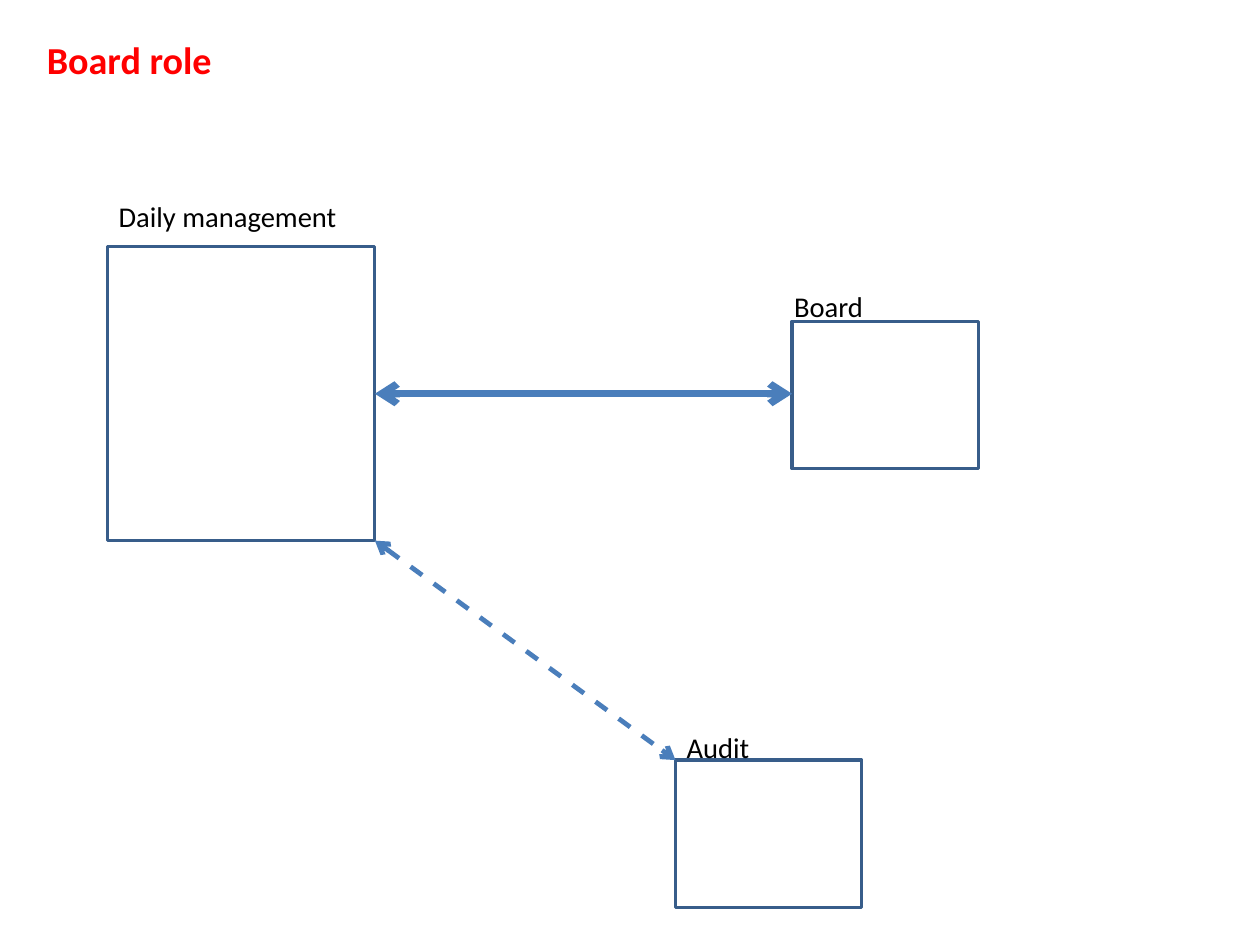
from lxml import etree
from pptx import Presentation
from pptx.dml.color import RGBColor
from pptx.enum.shapes import MSO_CONNECTOR, MSO_SHAPE
from pptx.enum.text import MSO_ANCHOR, MSO_AUTO_SIZE, PP_ALIGN
from pptx.oxml.ns import qn
from pptx.util import Inches, Pt

RECTANGLE = MSO_SHAPE.RECTANGLE
STRAIGHT = MSO_CONNECTOR.STRAIGHT
TOP = MSO_ANCHOR.TOP
LEFT = PP_ALIGN.LEFT
NO_AUTOFIT = MSO_AUTO_SIZE.NONE

RED = RGBColor(0xFF, 0x00, 0x00)
BLACK = RGBColor(0x00, 0x00, 0x00)
WHITE = RGBColor(0xFF, 0xFF, 0xFF)
BOX_BLUE = RGBColor(0x38, 0x5D, 0x8A)
ARROW_BLUE = RGBColor(0x4A, 0x7E, 0xBB)

# Content: left, top, width, height in inches
TITLE = ("Board role", (0.31, 0.27, 10.55, 2.63))
MANAGEMENT = (0.94, 2.16, 2.34, 2.57)
BOARD = (6.93, 2.81, 1.63, 1.29)
AUDIT = (5.91, 6.65, 1.63, 1.29)
LABELS = [
    ("Daily management", (0.94, 1.69, 3.23, 0.4)),
    ("Board", (6.85, 2.48, 2.36, 0.4)),
    ("Audit", (5.91, 6.34, 1.97, 0.4)),
]
TITLE_FONT = {"name": "Calibri", "size": Pt(24), "bold": True}
LABEL_FONT = {"name": "Calibri", "size": Pt(18), "bold": False}

# The page is 28 by 21 centimetres
CM_PER_INCH = 2.54
PAGE_WIDTH = Inches(28 / CM_PER_INCH)
PAGE_HEIGHT = Inches(21 / CM_PER_INCH)


def inches(values):
    return [Inches(value) for value in values]


def write(shape, text, font, color):
    frame = shape.text_frame
    frame.word_wrap = True
    frame.auto_size = NO_AUTOFIT
    frame.vertical_anchor = TOP
    para = frame.paragraphs[0]
    para.alignment = LEFT
    span = para.add_run()
    span.text = text
    for name, value in font.items():
        setattr(span.font, name, value)
    span.font.color.rgb = color


def add_arrow(page, start, end, width, dashed=False):
    arrow = page.shapes.add_connector(STRAIGHT, *inches(start + end))
    arrow.line.color.rgb = ARROW_BLUE
    arrow.line.width = Pt(width)
    outline = arrow.line._get_or_add_ln()
    # Dashes and gaps of three line widths
    if dashed:
        pattern = etree.SubElement(outline, qn("a:custDash"))
        etree.SubElement(pattern, qn("a:ds"), d="300000", sp="300000")
    # Arrowheads at both ends, no shadow
    for tag in ("a:headEnd", "a:tailEnd"):
        etree.SubElement(outline, qn(tag), type="arrow")
    etree.SubElement(arrow._element.spPr, qn("a:effectLst"))


def main():
    deck = Presentation()
    deck.slide_width = PAGE_WIDTH
    deck.slide_height = PAGE_HEIGHT
    page = deck.slides.add_slide(deck.slide_layouts[5])

    # Title
    text, area = TITLE
    title = page.shapes.title
    title.left, title.top, title.width, title.height = inches(area)
    write(title, text, TITLE_FONT, RED)

    # Boxes
    for area in (MANAGEMENT, BOARD, AUDIT):
        box = page.shapes.add_shape(RECTANGLE, *inches(area))
        box.shadow.inherit = False
        box.fill.solid()
        box.fill.fore_color.rgb = WHITE
        box.line.color.rgb = BOX_BLUE
        box.line.width = Pt(2)

    # Labels
    for text, area in LABELS:
        label = page.shapes.add_textbox(*inches(area))
        write(label, text, LABEL_FONT, BLACK)

    # Arrows from the right side and the lower right corner of management
    left, top, width, height = MANAGEMENT
    right, middle, bottom = left + width, top + height / 2, top + height
    add_arrow(page, (right, middle), (BOARD[0], middle), 4.5)
    add_arrow(page, (right, bottom), AUDIT[:2], 3, dashed=True)

    deck.save("out.pptx")


if __name__ == "__main__":
    main()
